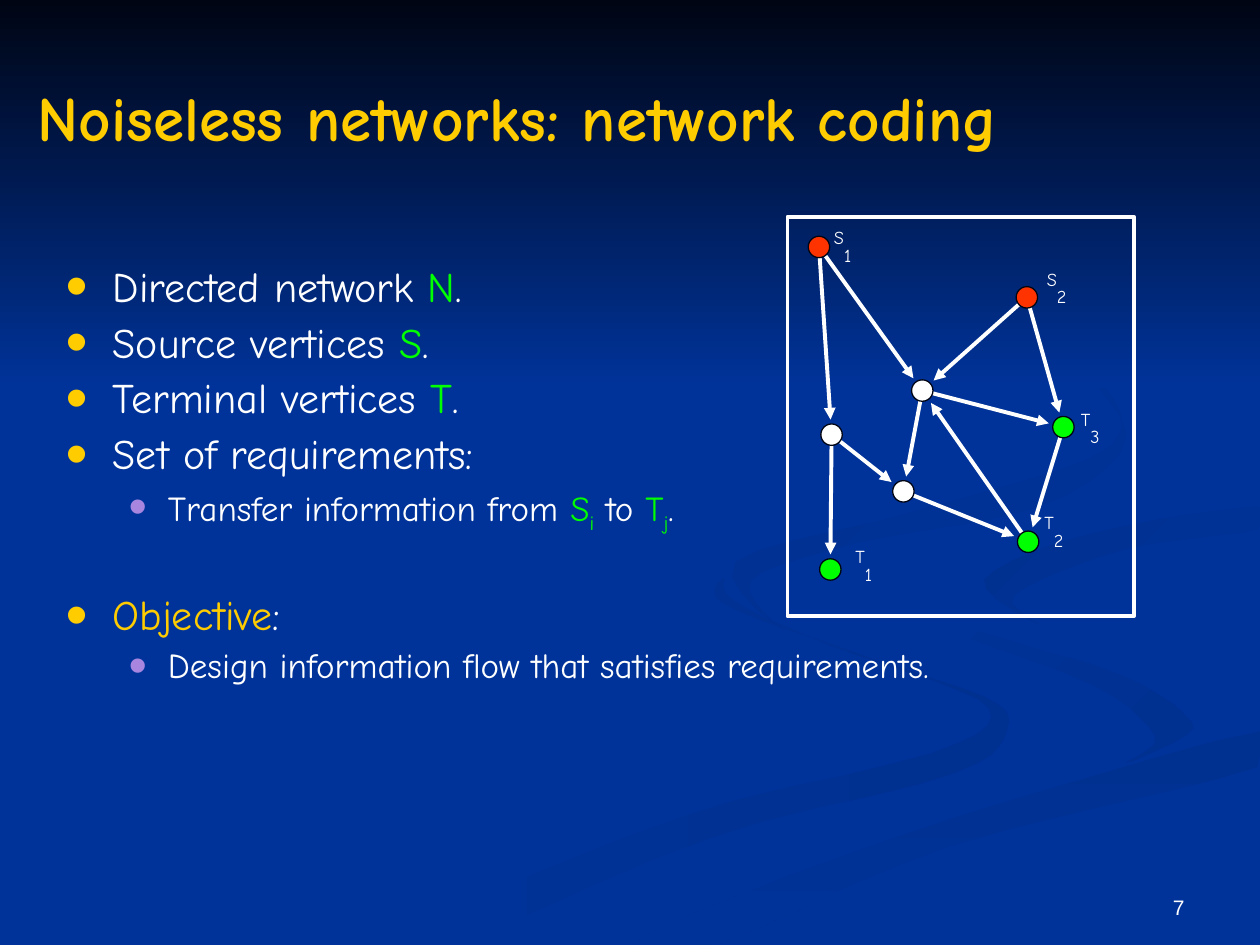
"""Build the slide on network coding in noiseless networks."""
import math

import pptx
import pptx.dml.color
import pptx.enum.shapes
import pptx.enum.text
import pptx.oxml.ns
import pptx.util
from lxml import etree

UNIT = 0.72
WIDE, HIGH = 1000, 750
THEME = {
    "font": "Comic Neue", "plain": "Arial",
    "title": 36, "body": 24, "sub": 20, "label": 18, "page": 12,
    "back": "003399", "dark": "000514", "white": "FFFFFF", "gold": "FFCC00",
    "green": "00FF00", "red": "FF3300", "lilac": "A886E0", "shade": "003090",
    "thick": 2.25, "thin": 0.75,
}
TITLE = "Noiseless networks: network coding"
BODY = [
    (0, 6, [("Directed network ",), ("N", "green"), (".",)]),
    (0, 6, [("Source vertices ",), ("S", "green"), (".",)]),
    (0, 6, [("Terminal vertices ",), ("T", "green"), (".",)]),
    (0, 6, [("Set of requirements:",)]),
    (1, 5, [("Transfer information from ",), ("S", "green"), ("i", "green", -25),
            (" to ",), ("T", "green"), ("j", "green", -25), (".",)]),
    (0, 36.5, [("Objective", "gold"), (":",)]),
    (1, 5, [("Design information flow that satisfies requirements.",)]),
]
LEVELS = [("body", "gold", 27, -27), ("sub", "lilac", 58.5, -22.5)]
FRAME = (625, 172, 275, 317)
DOT, REACH = 17, 12
NODES = {
    "S1": (650, 196, "red"), "S2": (815, 236, "red"), "T1": (659, 452, "green"),
    "T2": (816, 430, "green"), "T3": (844, 339, "green"),
    "A": (660, 345, "white"), "B": (717, 390, "white"), "C": (732, 310, "white"),
}
EDGES = ["T3 T2", "S2 T3", "S1 A", "S1 C", "C B", "C T3", "A T1", "T2 C",
         "S2 C", "A B", "B T2"]
LABELS = {"S1": (652, 172), "T2": (819, 398), "T1": (669, 425),
          "T3": (848, 316), "S2": (821, 205)}
RIBBONS = [
    ("back", "shade", 0, [
        (781, 553), (661, 513), (583, 477), (575, 459), (576, 480), (697, 525),
        (785, 562), (739, 598), (539, 649), (300, 749), (361, 749), (564, 665),
        (756, 614), (799, 580)]),
    ("back", "shade", 45, [
        (943, 570), (888, 535), (745, 490), (724, 464), (739, 494), (868, 544),
        (917, 585), (894, 605), (937, 586)]),
    ("shade", "back", 90, [
        (503, 749), (571, 749), (752, 672), (998, 609), (998, 581), (764, 647),
        (599, 706)]),
    ("shade", "back", 45, [
        (781, 460), (826, 496), (805, 472), (896, 435), (998, 420), (998, 402),
        (865, 424)]),
    ("shade", "back", 45, [
        (683, 430), (825, 402), (894, 344), (821, 261), (762, 233), (862, 292),
        (882, 354), (733, 404), (584, 446), (622, 500), (596, 461)]),
]


def grid(*spans):
    return [pptx.util.Pt(round(UNIT * span, 2)) for span in spans]


def tint(name):
    return pptx.dml.color.RGBColor.from_string(THEME[name])


def child(parent, tag, **attrs):
    return etree.SubElement(parent, pptx.oxml.ns.qn(tag), attrs)


def write(para, text, size="body", color="white", font="font", bold=False, base=0):
    run = para.add_run()
    run.text = text
    run.font.size = pptx.util.Pt(THEME[size])
    run.font.name = THEME[font]
    run.font.bold = bold
    run.font.color.rgb = tint(color)
    if base:
        run.font._element.set("baseline", str(base * 1000))


def smooth(points, steps=5):
    curve = []
    for index, b in enumerate(points):
        a, c, d = (points[(index + step) % len(points)] for step in (-1, 1, 2))
        for t in (step / steps for step in range(steps)):
            x, y = (q + t / 2 * (r - p + t * (2 * p - 5 * q + 4 * r - s
                                              + t * (3 * (q - r) + s - p)))
                    for p, q, r, s in zip(a, b, c, d))
            curve.append((min(x, WIDE), min(y, HIGH)))
    return curve


def shade(shape, start, end, angle):
    shape.shadow.inherit = False
    shape.line.fill.background()
    shape.fill.gradient()
    shape.fill.gradient_angle = -angle % 360
    for stop, color in zip(shape.fill.gradient_stops, (start, end)):
        stop.color.rgb = tint(color)


def outline(shapes, kind, box, fill, line, width):
    shape = shapes.add_shape(kind, *grid(*box))
    shape.shadow.inherit = False
    if fill:
        shape.fill.solid()
        shape.fill.fore_color.rgb = tint(fill)
    else:
        shape.fill.background()
    shape.line.color.rgb = tint(line)
    shape.line.width = pptx.util.Pt(THEME[width])


def arrow(shapes, edge):
    (x, y, _), (right, low, _) = (NODES[name] for name in edge.split())
    keep = 1 - REACH / math.hypot(right - x, low - y)
    ends = grid(x, y, x + keep * (right - x), y + keep * (low - y))
    link = shapes.add_connector(pptx.enum.shapes.MSO_CONNECTOR.STRAIGHT, *ends)
    link.line.color.rgb = tint("white")
    link.line.width = pptx.util.Pt(THEME["thick"])
    child(link.line._get_or_add_ln(), "a:tailEnd", type="triangle")
    child(link._element.spPr, "a:effectLst")


def bullet(para, level, gap):
    size, color, left, indent = LEVELS[level]
    para.level = level
    para.line_spacing = 0.9
    para.space_before = pptx.util.Pt(gap)
    props = para._p.get_or_add_pPr()
    props.set("marL", str(pptx.util.Pt(left)))
    props.set("indent", str(pptx.util.Pt(indent)))
    child(child(props, "a:buClr"), "a:srgbClr", val=THEME[color])
    child(props, "a:buSzPct", val="150000")
    child(props, "a:buFont", typeface=THEME["plain"])
    child(props, "a:buChar", char="•")
    return size


def main():
    deck = pptx.Presentation()
    deck.slide_width, deck.slide_height = grid(WIDE, HIGH)
    slide = deck.slides.add_slide(deck.slide_layouts[1])
    shapes, kinds = slide.shapes, pptx.enum.shapes.MSO_SHAPE
    slide.background.fill.solid()
    slide.background.fill.fore_color.rgb = tint("back")
    for start, end, angle, points in RIBBONS:
        curve = smooth(points)
        path = shapes.build_freeform(*curve[0], scale=pptx.util.Pt(UNIT))
        path.add_line_segments(curve[1:], close=True)
        shade(path.convert_to_shape(), start, end, angle)
    sky = shapes.add_shape(kinds.RECTANGLE, *grid(0, 0, WIDE, 308))
    shade(sky, "dark", "back", 90)

    title, body = shapes.title, slide.placeholders[1]
    align, anchor = pptx.enum.text.PP_ALIGN, pptx.enum.text.MSO_ANCHOR
    for holder, box, hold in ((body, (42, 206, 930, 527), anchor.TOP),
                              (title, (20, 30, 973, 125), anchor.MIDDLE)):
        holder.left, holder.top, holder.width, holder.height = grid(*box)
        holder.text_frame.vertical_anchor = hold
        holder.text_frame.auto_size = pptx.enum.text.MSO_AUTO_SIZE.NONE
        shapes._spTree.append(holder._element)
    head = title.text_frame.paragraphs[0]
    head.alignment = align.LEFT
    write(head, TITLE, size="title", color="gold", bold=True)
    frame = body.text_frame
    for index, (level, gap, runs) in enumerate(BODY):
        para = frame.add_paragraph() if index else frame.paragraphs[0]
        size = bullet(para, level, gap)
        for text, *look in runs:
            write(para, text, size=size, **dict(zip(("color", "base"), look)))

    outline(shapes, kinds.RECTANGLE, FRAME, None, "white", "thick")
    for edge in EDGES:
        arrow(shapes, edge)
    for x, y, color in NODES.values():
        box = (x - DOT / 2, y - DOT / 2, DOT, DOT)
        outline(shapes, kinds.OVAL, box, color, "dark", "thin")
    for (name, digit), spot in LABELS.items():
        frame = shapes.add_textbox(*grid(*spot, 48, 40)).text_frame
        frame.word_wrap = False
        write(frame.paragraphs[0], name, size="label", base=30)
        write(frame.paragraphs[0], digit, size="label", base=-25)

    frame = shapes.add_textbox(*grid(717, 683, 233, 52)).text_frame
    frame.word_wrap = True
    frame.vertical_anchor = anchor.BOTTOM
    frame.paragraphs[0].alignment = align.RIGHT
    write(frame.paragraphs[0], "7", size="page", font="plain")
    deck.save("out.pptx")


if __name__ == "__main__":
    main()
